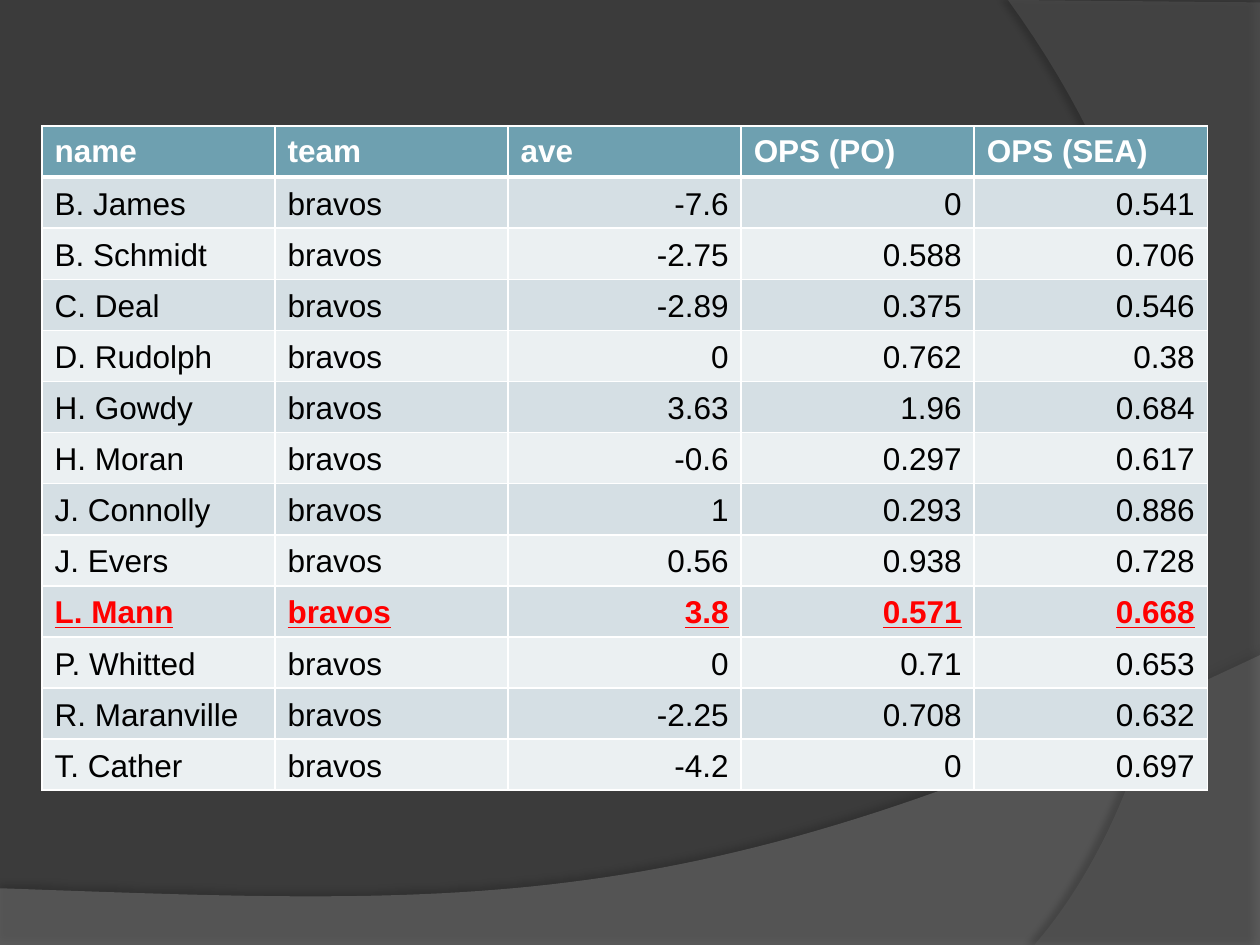
from dataclasses import dataclass

import pptx
import pptx.dml.color
import pptx.enum.text
import pptx.oxml
import pptx.oxml.ns
import pptx.util
from lxml import etree

Pt = pptx.util.Pt
Point = tuple[float, float]

COLORS = {
    "background": "3B3B3B",
    "lower wave": "7F7F7F",
    "right wave": "5E5E5E",
    "shadow": "000000",
    "border": "FFFFFF",
    "header": "6EA0B0",
    "odd row": "D5DFE4",
    "even row": "EBF0F2",
    "header text": "FFFFFF",
    "text": "000000",
    "highlight": "FF0000",
}

HEADINGS = ("name", "team", "ave", "OPS (PO)", "OPS (SEA)")
TEAM = "bravos"
PLAYERS = (
    ("B. James", "-7.6", "0", "0.541"),
    ("B. Schmidt", "-2.75", "0.588", "0.706"),
    ("C. Deal", "-2.89", "0.375", "0.546"),
    ("D. Rudolph", "0", "0.762", "0.38"),
    ("H. Gowdy", "3.63", "1.96", "0.684"),
    ("H. Moran", "-0.6", "0.297", "0.617"),
    ("J. Connolly", "1", "0.293", "0.886"),
    ("J. Evers", "0.56", "0.938", "0.728"),
    ("L. Mann", "3.8", "0.571", "0.668"),
    ("P. Whitted", "0", "0.71", "0.653"),
    ("R. Maranville", "-2.25", "0.708", "0.632"),
    ("T. Cather", "-4.2", "0", "0.697"),
)
HIGHLIGHTED = "L. Mann"
COLUMN_WIDTH, ROW_HEIGHT = 133.2, 29.2


@dataclass
class Wave:
    color: str
    opacity: int
    corners: list[Point]
    curve: tuple[Point, Point, Point, Point]
    shadow_opacity: int
    shadow_distance: float
    shadow_angle: int


@dataclass
class CellStyle:
    fill: str
    font: dict
    anchor: pptx.enum.text.MSO_ANCHOR
    top: float = 1
    bottom: float = 1


WAVES = (
    Wave("lower wave", 45, [(0, 540), (720, 540)],
         ((720, 374.4), (402.5, 524.9), (281.5, 517.7), (0, 507.6)), 35, 3.5, 270),
    Wave("right wave", 40, [(720, 1.4), (720, 540)],
         ((591.1, 540), (673.2, 445.7), (733, 216), (576, 0)), 45, 4, 180),
)


def rgb(name: str) -> pptx.dml.color.RGBColor:
    return pptx.dml.color.RGBColor.from_string(COLORS[name])


def curve_points(curve: tuple[Point, ...], steps: int = 60) -> list[Point]:
    """Return evenly stepped points of a cubic Bézier curve."""
    points = []
    for step in range(steps + 1):
        t = step / steps
        weights = ((1 - t) ** 3, 3 * t * (1 - t) ** 2, 3 * t * t * (1 - t), t ** 3)
        points.append(tuple(sum(w * p[axis] for w, p in zip(weights, curve)) for axis in (0, 1)))
    return points


def draw_wave(slide, wave: Wave) -> None:
    points = [(Pt(x), Pt(y)) for x, y in wave.corners + curve_points(wave.curve)]
    builder = slide.shapes.build_freeform(*points[0])
    builder.add_line_segments(points[1:], close=True)
    shape = builder.convert_to_shape()
    shape.fill.solid()
    shape.fill.fore_color.rgb = rgb(wave.color)
    shape.line.fill.background()
    shape.shadow.inherit = False

    # Transparency and soft shadow
    qn = pptx.oxml.ns.qn
    properties = shape.element.spPr
    color = properties.find(f"{qn('a:solidFill')}/{qn('a:srgbClr')}")
    etree.SubElement(color, qn("a:alpha"), val=str(wave.opacity * 1000))
    shadow = etree.SubElement(
        properties.find(qn("a:effectLst")), qn("a:outerShdw"), blurRad=str(Pt(4)),
        dist=str(Pt(wave.shadow_distance)), dir=str(wave.shadow_angle * 60000),
        algn="ctr", rotWithShape="0")
    shadow_color = etree.SubElement(shadow, qn("a:srgbClr"), val=COLORS["shadow"])
    etree.SubElement(shadow_color, qn("a:alpha"), val=str(wave.shadow_opacity * 1000))


def set_borders(cell, widths: dict[str, float]) -> None:
    properties = cell._tc.get_or_add_tcPr()
    for index, (side, width) in enumerate(widths.items()):
        properties.insert(index, pptx.oxml.parse_xml(
            f'<a:ln{side} {pptx.oxml.ns.nsdecls("a")} w="{Pt(width)}"><a:solidFill>'
            f'<a:srgbClr val="{COLORS["border"]}"/></a:solidFill></a:ln{side}>'))


def fill_cell(cell, text: str, style: CellStyle, alignment) -> None:
    cell.fill.solid()
    cell.fill.fore_color.rgb = rgb(style.fill)
    cell.vertical_anchor = style.anchor
    set_borders(cell, {"L": 1, "R": 1, "T": style.top, "B": style.bottom})
    paragraph = cell.text_frame.paragraphs[0]
    paragraph.alignment = alignment
    run = paragraph.add_run()
    run.text = text
    values = {"name": "Arial", "size": Pt(18), "bold": False, "underline": False}
    for attribute, value in (values | style.font).items():
        if attribute == "color":
            run.font.color.rgb = rgb(value)
        else:
            setattr(run.font, attribute, value)


def row_style(index: int, name: str) -> CellStyle:
    anchors = pptx.enum.text.MSO_ANCHOR
    if index == 0:
        return CellStyle("header", {"bold": True, "color": "header text"},
                         anchors.MIDDLE, bottom=3)
    font = {"color": "text"}
    if name == HIGHLIGHTED:
        font = {"color": "highlight", "bold": True, "underline": True}
    fill = "odd row" if index % 2 else "even row"
    return CellStyle(fill, font, anchors.BOTTOM, top=3 if index == 1 else 1)


def draw_table(slide) -> None:
    rows = [HEADINGS] + [(name, TEAM, *numbers) for name, *numbers in PLAYERS]
    table = slide.shapes.add_table(
        len(rows), len(HEADINGS), Pt(24), Pt(72),
        Pt(COLUMN_WIDTH * len(HEADINGS)), Pt(ROW_HEIGHT * len(rows))).table
    for column in table.columns:
        column.width = Pt(COLUMN_WIDTH)
    alignments = pptx.enum.text.PP_ALIGN
    for row_index, values in enumerate(rows):
        table.rows[row_index].height = Pt(ROW_HEIGHT)
        style = row_style(row_index, values[0])
        for column_index, text in enumerate(values):
            is_number = row_index > 0 and column_index > 1
            fill_cell(table.cell(row_index, column_index), text, style,
                      alignments.RIGHT if is_number else alignments.LEFT)


def main() -> None:
    presentation = pptx.Presentation()
    presentation.slide_width, presentation.slide_height = Pt(720), Pt(540)
    slide = presentation.slides.add_slide(presentation.slide_layouts[6])

    # Background with two waves
    slide.background.fill.solid()
    slide.background.fill.fore_color.rgb = rgb("background")
    for wave in WAVES:
        draw_wave(slide, wave)

    # Player statistics
    draw_table(slide)
    presentation.save("out.pptx")


if __name__ == "__main__":
    main()
